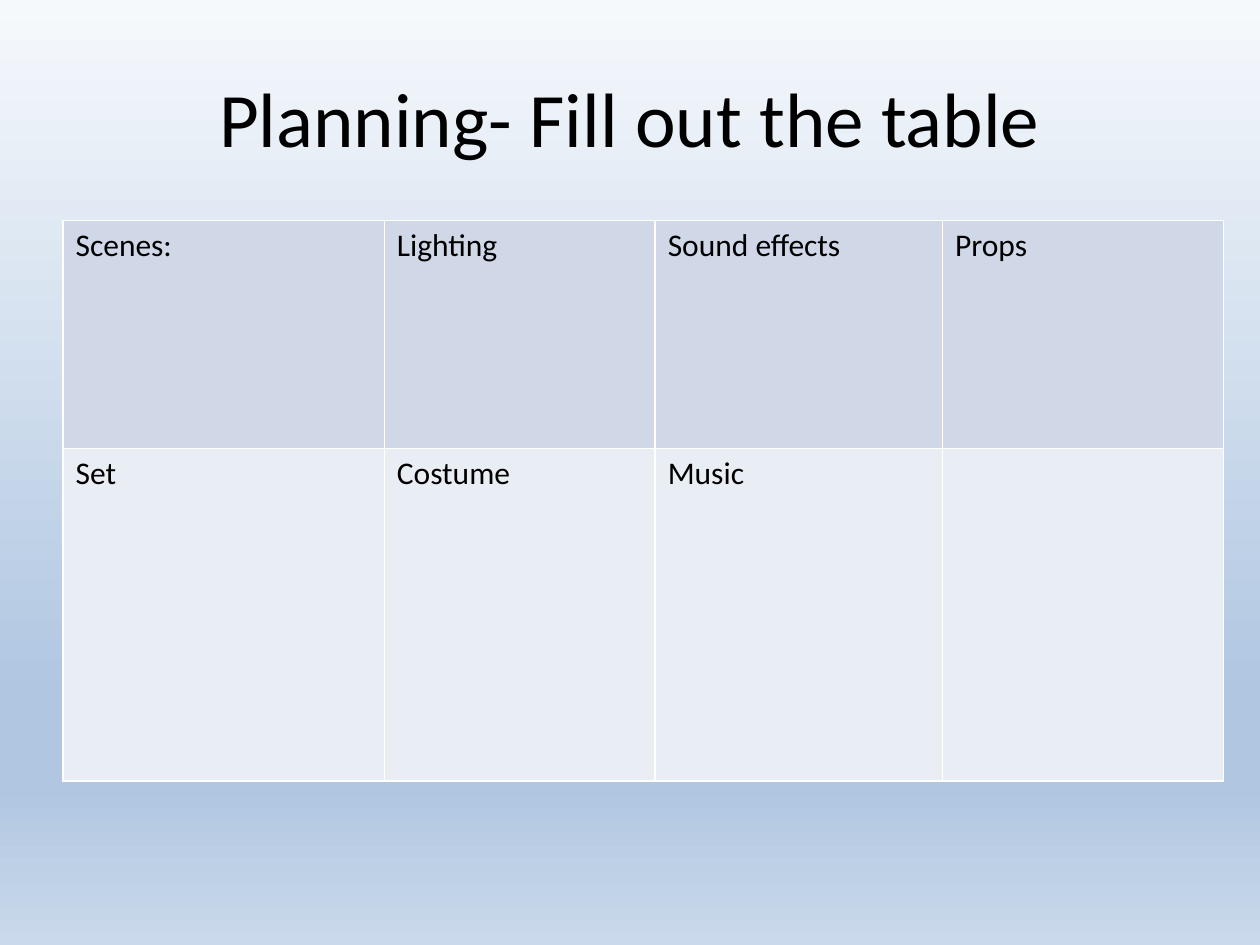
from typing import NamedTuple

from lxml.etree import SubElement
from pptx import Presentation
from pptx.dml.color import RGBColor
from pptx.enum.text import MSO_ANCHOR, PP_ALIGN
from pptx.oxml.ns import qn
from pptx.util import Emu, Pt

EMU_PER_PX = 9144  # 100 px to the inch
FONT = "Calibri"
COLORS = {
    "text": "000000",
    "border": "FFFFFF",
    "top row": "D0D8E8",
    "bottom row": "E9EDF4",
    "sky": "F6F9FC",
    "blue": "B0C6E1",
    "haze": "CAD9EB",
}
BACKGROUND_STOPS = [(0, "sky"), (74, "blue"), (83, "blue"), (100, "haze")]
COLUMN_WIDTHS = [255, 215, 228, 223]


class PlanningRow(NamedTuple):
    height: int
    fill: str
    labels: list[str]


ROWS = [
    PlanningRow(181, "top row", ["Scenes:", "Lighting", "Sound effects", "Props"]),
    PlanningRow(264, "bottom row", ["Set", "Costume", "Music", ""]),
]


def px(length: int) -> Emu:
    return Emu(length * EMU_PER_PX)


def color(name: str) -> RGBColor:
    return RGBColor.from_string(COLORS[name])


def add_color(parent, name: str) -> None:
    SubElement(parent, qn("a:srgbClr"), val=COLORS[name])


def set_text(text_frame, text: str, size: int, alignment: PP_ALIGN) -> None:
    paragraph = text_frame.paragraphs[0]
    paragraph.text = text
    paragraph.alignment = alignment
    font_format = {"name": FONT, "size": Pt(size), "bold": False}
    for font in [paragraph.font] + [run.font for run in paragraph.runs]:
        for attribute, value in font_format.items():
            setattr(font, attribute, value)
        font.color.rgb = color("text")


def set_background(slide) -> None:
    fill = slide.background.fill
    fill.gradient()
    fill.gradient_angle = 270  # top to bottom
    stops = slide.element.find(".//" + qn("a:gsLst"))
    for stop in list(stops):
        stops.remove(stop)
    for percent, name in BACKGROUND_STOPS:
        add_color(SubElement(stops, qn("a:gs"), pos=str(percent * 1000)), name)


def set_borders(cell) -> None:
    properties = cell._tc.get_or_add_tcPr()
    for index, side in enumerate(("a:lnL", "a:lnR", "a:lnT", "a:lnB")):
        line = SubElement(properties, qn(side), w=str(Pt(1)))
        add_color(SubElement(line, qn("a:solidFill")), "border")
        properties.insert(index, line)  # borders come before the fill


def add_title(slide, text: str) -> None:
    title = slide.shapes.title
    position = {"left": 50, "top": 30, "width": 900, "height": 125}
    for attribute, value in position.items():
        setattr(title, attribute, px(value))
    title.text_frame.vertical_anchor = MSO_ANCHOR.MIDDLE
    set_text(title.text_frame, text, 44, PP_ALIGN.CENTER)


def add_planning_table(slide, left: int, top: int) -> None:
    width, height = sum(COLUMN_WIDTHS), sum(row.height for row in ROWS)
    table = slide.shapes.add_table(
        len(ROWS), len(COLUMN_WIDTHS), px(left), px(top), px(width), px(height)
    ).table
    table.first_row = table.horz_banding = False
    for column, column_width in zip(table.columns, COLUMN_WIDTHS):
        column.width = px(column_width)
    for table_row, row in zip(table.rows, ROWS):
        table_row.height = px(row.height)
        for cell, label in zip(table_row.cells, row.labels):
            cell.fill.solid()
            cell.fill.fore_color.rgb = color(row.fill)
            set_borders(cell)
            set_text(cell.text_frame, label, 18, PP_ALIGN.LEFT)


def main() -> None:
    presentation = Presentation()
    presentation.slide_width, presentation.slide_height = px(1000), px(750)
    slide = presentation.slides.add_slide(presentation.slide_layouts[5])

    # Background, heading and planning grid
    set_background(slide)
    add_title(slide, "Planning- Fill out the table")
    add_planning_table(slide, 50, 175)

    presentation.save("out.pptx")


if __name__ == "__main__":
    main()
